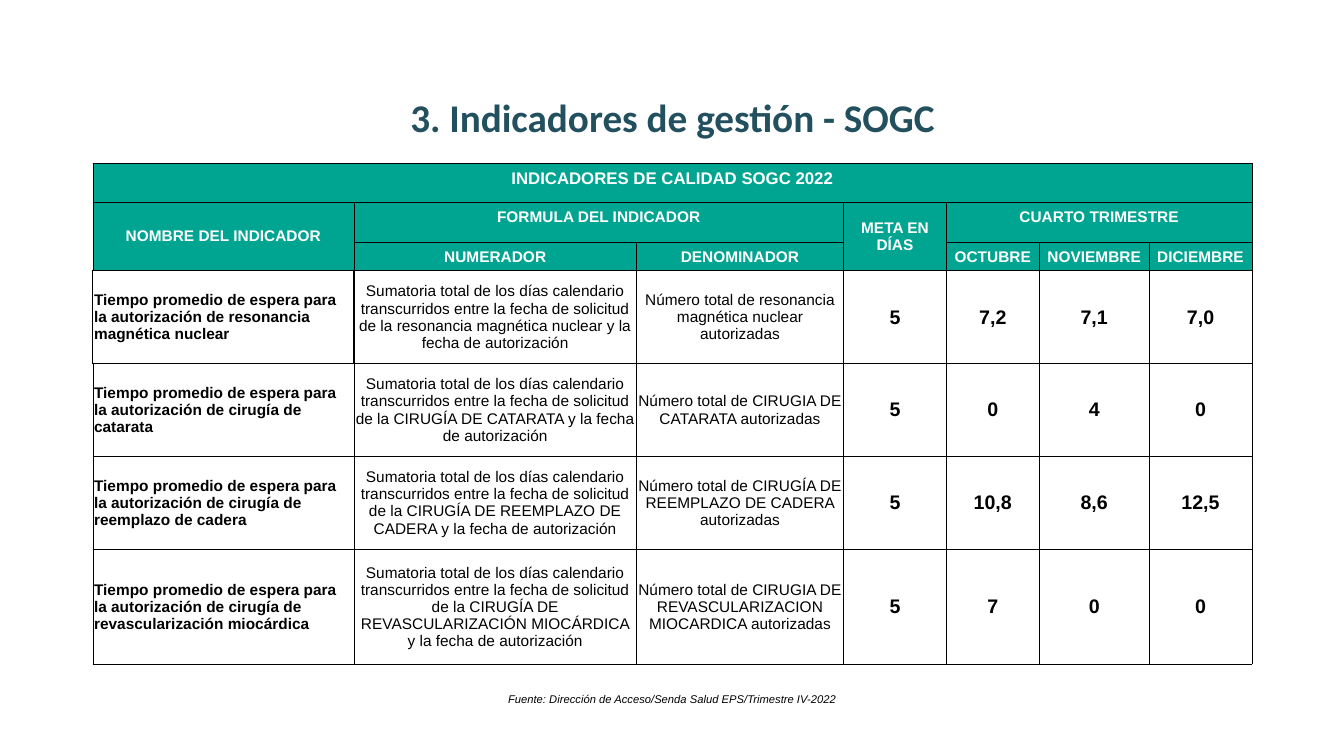
import pptx
import pptx.dml.color
import pptx.enum.text
import pptx.util
from lxml import etree

Cm = pptx.util.Cm
Pt = pptx.util.Pt
ALIGN = pptx.enum.text.PP_ALIGN
ANCHOR = pptx.enum.text.MSO_ANCHOR

COLORS = {"title": "23505E", "header": "00A592", "white": "FFFFFF", "black": "000000"}

# Font values for each kind of text
FORMATS = {
    "title": {"name": "Calibri", "size": Pt(28), "bold": True, "color": "title"},
    "table_title": {"name": "Arial", "size": Pt(12), "bold": True, "color": "white"},
    "header": {"name": "Arial", "size": Pt(11), "bold": True, "color": "white"},
    "indicator": {"name": "Arial", "size": Pt(11), "bold": True, "color": "black"},
    "formula": {"name": "Arial", "size": Pt(11), "bold": False, "color": "black"},
    "value": {"name": "Arial", "size": Pt(14), "bold": True, "color": "black"},
    "source": {"name": "Arial", "size": Pt(8), "italic": True, "color": "black"},
}

COLUMN_WIDTHS = [6.58, 7.12, 5.22, 2.59, 2.34, 2.77, 2.59]
ROW_HEIGHTS = [0.99, 0.99, 0.71, 2.34, 2.34, 2.34, 2.9]

# Header cells: row, column, rows spanned, columns spanned, text, anchor
HEADERS = [
    (0, 0, 1, 7, "INDICADORES DE CALIDAD SOGC 2022", ANCHOR.TOP),
    (1, 0, 2, 1, "NOMBRE DEL INDICADOR", ANCHOR.MIDDLE),
    (1, 1, 1, 2, "FORMULA DEL INDICADOR", ANCHOR.TOP),
    (1, 3, 2, 1, "META EN DÍAS", ANCHOR.MIDDLE),
    (1, 4, 1, 3, "CUARTO TRIMESTRE", ANCHOR.TOP),
    (2, 1, 1, 1, "NUMERADOR", ANCHOR.MIDDLE),
    (2, 2, 1, 1, "DENOMINADOR", ANCHOR.MIDDLE),
    (2, 4, 1, 1, "OCTUBRE", ANCHOR.MIDDLE),
    (2, 5, 1, 1, "NOVIEMBRE", ANCHOR.MIDDLE),
    (2, 6, 1, 1, "DICIEMBRE", ANCHOR.MIDDLE),
]
FIRST_BODY_ROW = 3

# Indicator, procedure in the numerator, denominator, target and months
INDICATORS = [
    ("resonancia magnética nuclear", "resonancia magnética nuclear y la fecha de autorización",
     "resonancia magnética nuclear", "5", "7,2", "7,1", "7,0"),
    ("cirugía de catarata", "CIRUGÍA DE CATARATA y la fecha de autorización",
     "CIRUGIA DE CATARATA", "5", "0", "4", "0"),
    ("cirugía de reemplazo de cadera",
     "CIRUGÍA DE REEMPLAZO DE CADERA y la fecha de autorización",
     "CIRUGÍA DE REEMPLAZO DE CADERA", "5", "10,8", "8,6", "12,5"),
    ("cirugía de revascularización miocárdica",
     "CIRUGÍA DE REVASCULARIZACIÓN MIOCÁRDICA y la fecha de autorización",
     "CIRUGIA DE REVASCULARIZACION MIOCARDICA", "5", "7", "0", "0"),
]


def write_text(text_frame, text, kind, alignment=ALIGN.CENTER):
    text_frame.word_wrap = True
    paragraph = text_frame.paragraphs[0]
    paragraph.alignment = alignment
    run = paragraph.add_run()
    run.text = text
    for attribute, value in FORMATS[kind].items():
        if attribute == "color":
            run.font.color.rgb = pptx.dml.color.RGBColor.from_string(COLORS[value])
        else:
            setattr(run.font, attribute, value)


def set_borders(cell, widths):
    properties = cell._tc.get_or_add_tcPr()
    for side, width in zip("LRTB", widths):
        line = etree.SubElement(properties, pptx.oxml.ns.qn(f"a:ln{side}"), w=str(Pt(width)))
        fill = etree.SubElement(line, pptx.oxml.ns.qn("a:solidFill"))
        etree.SubElement(fill, pptx.oxml.ns.qn("a:srgbClr"), val=COLORS["black"])


def set_margins(cell, horizontal, top, bottom):
    margins = {"margin_left": horizontal, "margin_right": horizontal,
               "margin_top": top, "margin_bottom": bottom}
    for attribute, length in margins.items():
        setattr(cell, attribute, Cm(length))


def add_title(slide, left, top, width, height):
    title = slide.shapes.title
    box = {"left": left, "top": top, "width": width, "height": height}
    for attribute, length in box.items():
        setattr(title, attribute, Cm(length))
    title.text_frame.auto_size = pptx.enum.text.MSO_AUTO_SIZE.NONE
    title.text_frame.vertical_anchor = ANCHOR.MIDDLE
    write_text(title.text_frame, "3. Indicadores de gestión - SOGC", "title")


def fill_headers(table):
    for row, column, row_span, column_span, text, anchor in HEADERS:
        cell = table.cell(row, column)
        if row_span * column_span > 1:
            cell.merge(table.cell(row + row_span - 1, column + column_span - 1))
            set_margins(cell, 0.28, 0.15, 0.15)
        cell.vertical_anchor = anchor
        write_text(cell.text_frame, text, "header" if row else "table_title")


def fill_indicators(table):
    for row, (name, numerator, denominator, *values) in enumerate(INDICATORS, FIRST_BODY_ROW):
        texts = [
            f"Tiempo promedio de espera para la autorización de {name}",
            "Sumatoria total de los días calendario transcurridos entre "
            f"la fecha de solicitud de la {numerator}",
            f"Número total de {denominator} autorizadas",
            *values,
        ]
        kinds = ["indicator", "formula", "formula"] + ["value"] * len(values)
        for column, (text, kind) in enumerate(zip(texts, kinds)):
            cell = table.cell(row, column)
            cell.vertical_anchor = ANCHOR.MIDDLE
            alignment = ALIGN.LEFT if kind == "indicator" else ALIGN.CENTER
            write_text(cell.text_frame, text, kind, alignment)


def add_indicator_table(slide, left, top):
    frame = slide.shapes.add_table(
        len(ROW_HEIGHTS), len(COLUMN_WIDTHS), Cm(left), Cm(top),
        Cm(sum(COLUMN_WIDTHS)), Cm(sum(ROW_HEIGHTS)))
    table = frame.table
    table.first_row = False
    table.horz_banding = False
    for column, width in zip(table.columns, COLUMN_WIDTHS):
        column.width = Cm(width)
    for row, height in zip(table.rows, ROW_HEIGHTS):
        row.height = Cm(height)

    # Borders, fills and margins; the first indicator has a heavier outline
    for row in range(len(ROW_HEIGHTS)):
        for column in range(len(COLUMN_WIDTHS)):
            cell = table.cell(row, column)
            widths = [0.5] * 4
            if column == 0 and row == FIRST_BODY_ROW:
                widths = [1] * 4
            elif column == 0 and row == FIRST_BODY_ROW + 1:
                widths[2] = 1
            set_borders(cell, widths)
            set_margins(cell, 0.03, 0.03, 0)
            if row < FIRST_BODY_ROW:
                cell.fill.solid()
                cell.fill.fore_color.rgb = pptx.dml.color.RGBColor.from_string(COLORS["header"])
            else:
                cell.fill.background()

    fill_headers(table)
    fill_indicators(table)


def add_source(slide, left, top, width, height):
    box = slide.shapes.add_textbox(Cm(left), Cm(top), Cm(width), Cm(height))
    write_text(box.text_frame,
               "Fuente: Dirección de Acceso/Senda Salud EPS/Trimestre IV-2022", "source")


def main():
    presentation = pptx.Presentation()
    presentation.slide_width = Cm(33.87)
    presentation.slide_height = Cm(19.05)
    slide = presentation.slides.add_slide(presentation.slide_layouts[5])
    add_title(slide, 6.76, 2.21, 20.37, 1.45)
    add_indicator_table(slide, 2.34, 4.12)
    add_source(slide, 8.69, 17.32, 16.51, 0.61)
    presentation.save("out.pptx")


if __name__ == "__main__":
    main()
